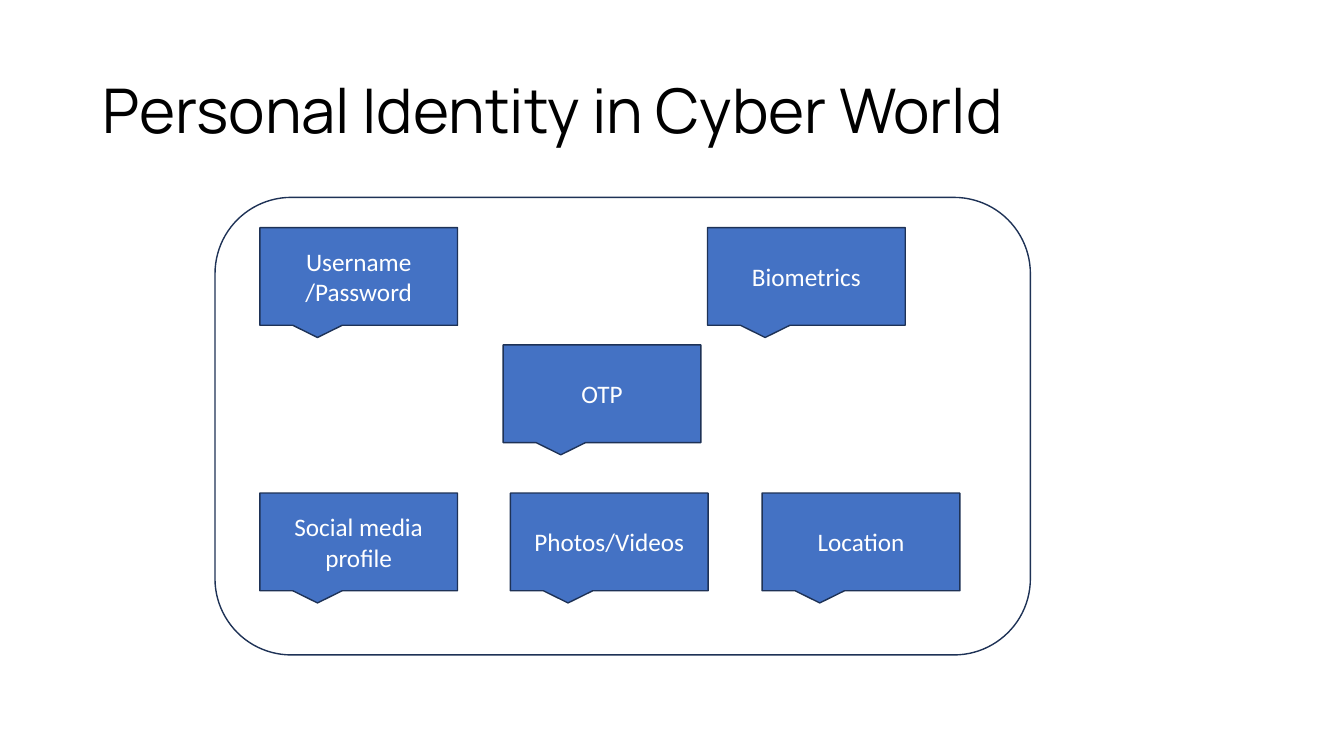
"""Build the slide on personal identity in the cyber world."""
from pptx import Presentation
from pptx.dml.color import RGBColor
from pptx.enum.shapes import MSO_SHAPE as Preset
from pptx.enum.text import MSO_ANCHOR as Anchor, PP_ALIGN as Align
from pptx.util import Pt

NAVY = "1E3256"
BLUE = "4472C4"
CALLOUT_WIDTH, CALLOUT_HEIGHT = 141.2, 69.8
TOP_ROW, MIDDLE_ROW, BOTTOM_ROW = 162.6, 246.4, 352.2
LEFT_COLUMN = 185.6


def color(value):
    return RGBColor.from_string(value)


def write(shape, text, size=18, font="Calibri", fill="FFFFFF", align=Align.CENTER, spacing=1.0):
    frame = shape.text_frame
    frame.word_wrap = True
    frame.vertical_anchor = Anchor.MIDDLE
    paragraph = frame.paragraphs[0]
    paragraph.alignment = align
    paragraph.line_spacing = spacing
    run = paragraph.add_run()
    run.text = text
    run.font.size = Pt(size)
    run.font.name = font
    run.font.color.rgb = color(fill)


presentation = Presentation()
presentation.slide_width, presentation.slide_height = Pt(960), Pt(540)
slide = presentation.slides.add_slide(presentation.slide_layouts[5])

title = slide.shapes.title
title.left, title.top, title.width, title.height = Pt(66), Pt(28.8), Pt(828), Pt(104.4)
write(title, "Personal Identity in Cyber World", size=44, font="Manrope",
      fill="000000", align=Align.LEFT, spacing=0.9)

callouts = [
    ("Username /Password", LEFT_COLUMN, TOP_ROW),
    ("OTP", 359.4, MIDDLE_ROW),
    ("Biometrics", 505.4, TOP_ROW),
    ("Social media profile", LEFT_COLUMN, BOTTOM_ROW),
    ("Photos/Videos", 364.6, BOTTOM_ROW),
    ("Location", 544.4, BOTTOM_ROW),
]
group = slide.shapes.add_group_shape()
for text, left, top in callouts:
    callout = group.shapes.add_shape(Preset.RECTANGULAR_CALLOUT, Pt(left), Pt(top),
                                     Pt(CALLOUT_WIDTH), Pt(CALLOUT_HEIGHT))
    callout.fill.solid()
    callout.fill.fore_color.rgb = color(BLUE)
    write(callout, text)

border = group.shapes.add_shape(Preset.ROUNDED_RECTANGLE, Pt(153.6), Pt(141), Pt(582.4), Pt(326.8))
border.fill.background()

for shape in group.shapes:
    shape.shadow.inherit = False
    shape.line.color.rgb = color(NAVY)
    shape.line.width = Pt(1)

presentation.save("out.pptx")
